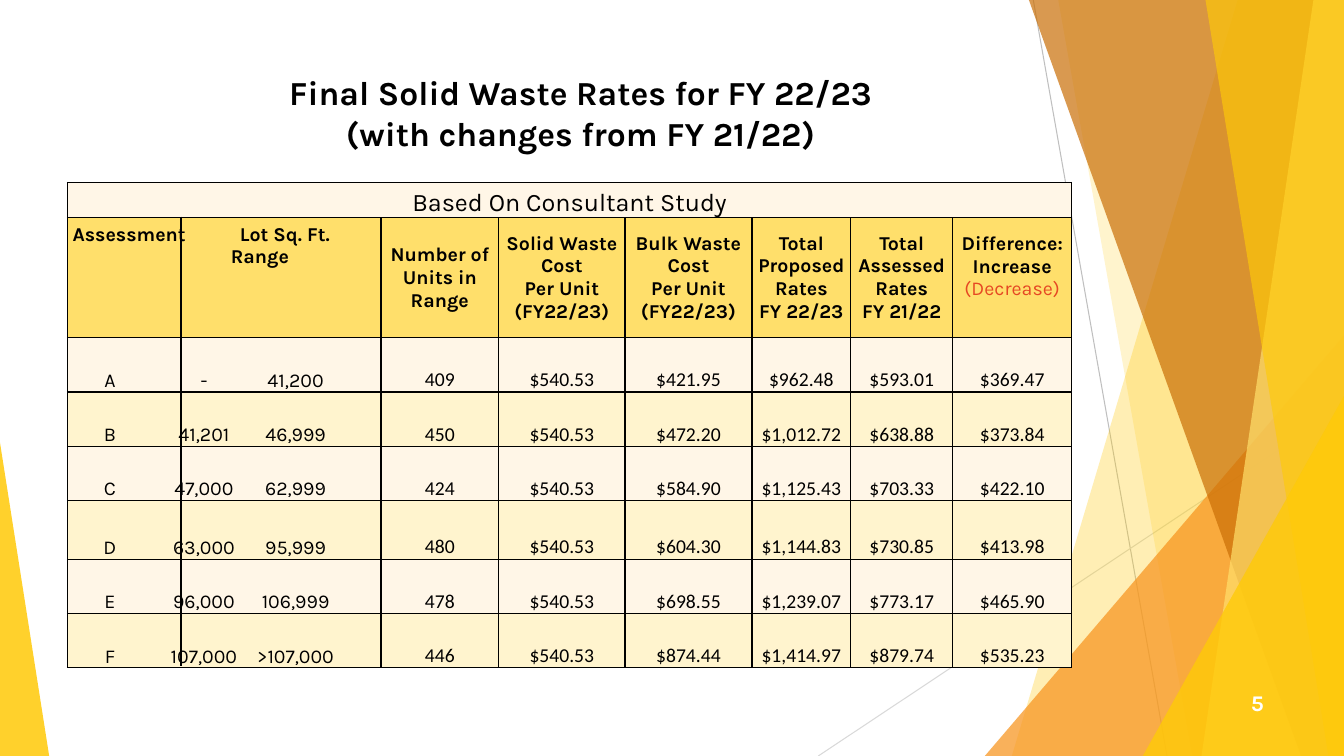
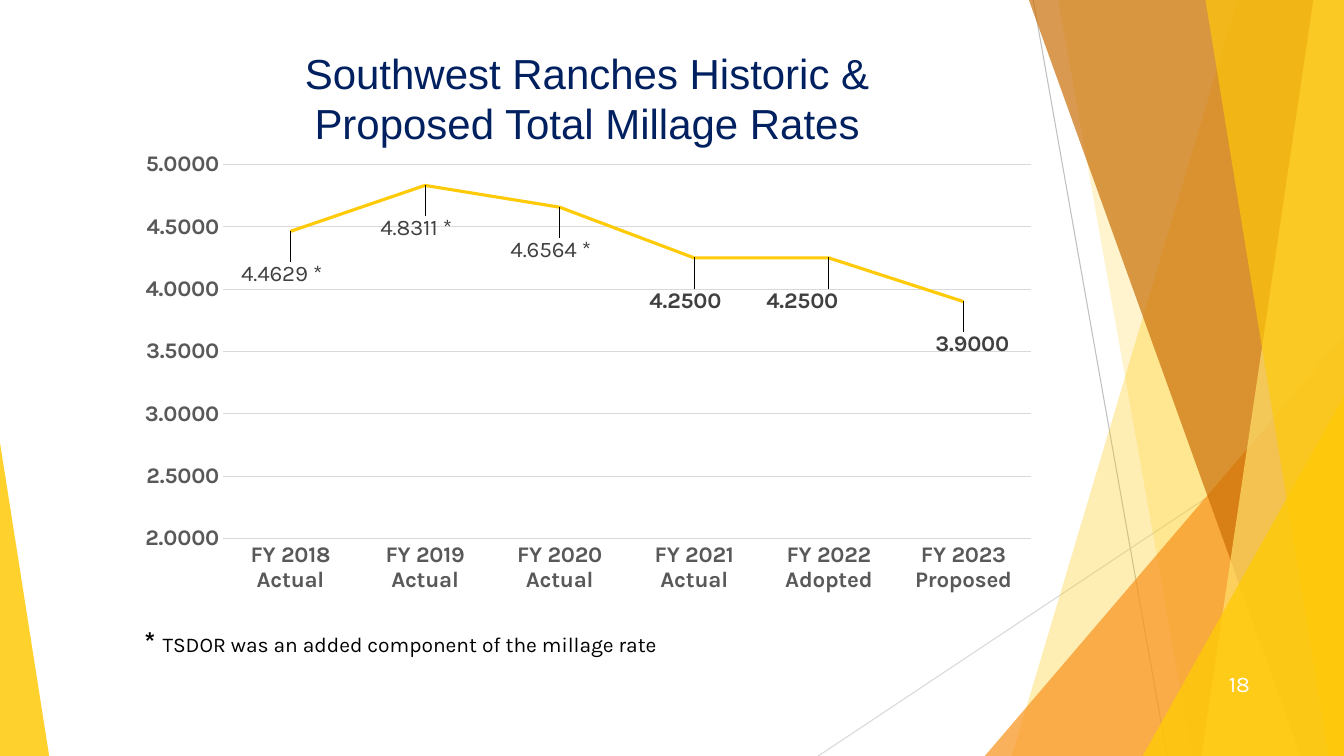
"""Build two town budget slides: solid waste rates and millage history."""
from dataclasses import dataclass

from lxml import etree
from pptx import Presentation
from pptx import util as u
from pptx.chart import data as chart_data
from pptx.dml.color import RGBColor
from pptx.enum import chart as charts, shapes, text
from pptx.oxml import ns

Cm, Pt = u.Cm, u.Pt


@dataclass(frozen=True)
class Theme:
    width: float = 33.87
    height: float = 19.05
    face: str = "Karla"
    figure_face: str = "Calibri"
    title_face: str = "Arial"
    black: str = "000000"
    white: str = "FFFFFF"
    navy: str = "002060"
    red: str = "E64823"
    gold: str = "FFCA08"
    pale_gold: str = "FFDF6B"
    orange: str = "F8931D"
    brown: str = "CA6F06"
    cream: str = "FFF6E7"
    butter: str = "FFF4CE"
    axis_text: str = "595959"
    label_text: str = "404040"
    grid: str = "D9D9D9"
    ray: str = "BFBFBF"
    big_title: int = 30
    title: int = 24
    star: int = 20
    banner: int = 18
    label: int = 16
    note: int = 15
    cell: int = 14
    chart: int = 10


THEME = Theme()
RAYS = [(26.04, 0, 29.41, 19.05, THEME.ray), (33.87, 10.24, 20.62, 19.05, THEME.grid)]
FACETS = [
    ("band", (31.19, 25.5), THEME.gold, 30),
    ("band", (26.67, 30.05), THEME.gold, 20),
    ("triangle", (24.82, 8.46, 9.05, 10.59, 1), THEME.orange, 72),
    ("band", (25.93, 32.79), THEME.brown, 70),
    ("band", (33.1, 30.28), THEME.pale_gold, 70),
    ("band", (30.38, 33.48), THEME.gold, 65),
    ("triangle", (28.8, 9.98, 5.07, 9.07, 1), THEME.gold, 80),
    ("triangle", (0, 11.15, 1.24, 7.9, 0), THEME.gold, 85),
]
COLUMN_WIDTHS = [7.9, 2.97, 3.18, 3.2, 2.49, 2.57, 3]
ROW_HEIGHTS = [0.89, 3.02, 1.37, 1.37, 1.37, 1.47, 1.37, 1.37]
HEADINGS = [
    ["Number of Units in Range"],
    ["Solid Waste", "Cost", "Per Unit", "(FY22/23)"],
    ["Bulk Waste", "Cost", "Per Unit", "(FY22/23)"],
    ["Total", "Proposed", "Rates", "FY 22/23"],
    ["Total", "Assessed", "Rates", "FY 21/22"],
    ["Difference:", "Increase", "(Decrease)"],
]
RATES = [
    ("A", "-", "41,200", "409", "$540.53", "$421.95", "$962.48", "$593.01", "$369.47"),
    ("B", "41,201", "46,999", "450", "$540.53", "$472.20", "$1,012.72", "$638.88", "$373.84"),
    ("C", "47,000", "62,999", "424", "$540.53", "$584.90", "$1,125.43", "$703.33", "$422.10"),
    ("D", "63,000", "95,999", "480", "$540.53", "$604.30", "$1,144.83", "$730.85", "$413.98"),
    ("E", "96,000", "106,999", "478", "$540.53", "$698.55", "$1,239.07", "$773.17", "$465.90"),
    ("F", "107,000", ">107,000", "446", "$540.53", "$874.44", "$1,414.97", "$879.74", "$535.23"),
]
MILLAGE = {
    "FY 2018 Actual": 4.4629, "FY 2019 Actual": 4.8311, "FY 2020 Actual": 4.6564,
    "FY 2021 Actual": 4.25, "FY 2022 Adopted": 4.25, "FY 2023 Proposed": 3.9,
}
LABEL_SHIFTS = [-0.01, -0.01, -0.01, -0.01, -0.03, 0.01]
LABEL_DROP = 0.06
STARRED_YEARS = 3


def add_xml(parent, tag, index=None, **attributes):
    child = etree.Element(ns.qn(tag), {key: str(value) for key, value in attributes.items()})
    parent.insert(len(parent) if index is None else index, child)
    return child


def add_layout(parent, index, **settings):
    manual = add_xml(add_xml(parent, "c:layout", index), "c:manualLayout")
    for key, value in settings.items():
        add_xml(manual, f"c:{key}", val=value)


class Deck:
    def __init__(self, theme):
        self.theme = theme
        self.show = Presentation()
        self.show.slide_width = Cm(theme.width)
        self.show.slide_height = Cm(theme.height)
        self.slide = None

    def start_slide(self):
        self.slide = self.show.slides.add_slide(self.show.slide_layouts[6])
        for *ends, color in RAYS:
            self.line(*ends, color, 0.75)
        for kind, geometry, color, opacity in FACETS:
            facet = self.band(*geometry) if kind == "band" else self.triangle(*geometry)
            self.paint(facet, color, opacity)

    def line(self, x1, y1, x2, y2, color, weight):
        ruled = self.slide.shapes.add_connector(
            shapes.MSO_CONNECTOR.STRAIGHT, Cm(x1), Cm(y1), Cm(x2), Cm(y2))
        ruled.line.color.rgb = RGBColor.from_string(color)
        ruled.line.width = Pt(weight)
        add_xml(ruled.element.spPr, "a:effectLst")

    def band(self, top, bottom):
        right, base = Cm(self.theme.width), Cm(self.theme.height)
        outline = self.slide.shapes.build_freeform(Cm(top), 0)
        outline.add_line_segments([(right, 0), (right, base), (Cm(bottom), base)])
        return outline.convert_to_shape()

    def triangle(self, left, top, width, height, apex):
        corner = self.slide.shapes.add_shape(
            shapes.MSO_SHAPE.ISOSCELES_TRIANGLE, Cm(left), Cm(top), Cm(width), Cm(height))
        corner.adjustments[0] = apex
        return corner

    def paint(self, facet, color, opacity):
        facet.shadow.inherit = False
        facet.line.fill.background()
        facet.fill.solid()
        facet.fill.fore_color.rgb = RGBColor.from_string(color)
        tint = facet.element.spPr.find(f"{ns.qn('a:solidFill')}/{ns.qn('a:srgbClr')}")
        add_xml(tint, "a:alpha", val=opacity * 1000)

    def style(self, font, size, color=None, face=None, bold=False):
        font.size = Pt(size)
        font.name = face or self.theme.face
        font.bold = bold
        font.color.rgb = RGBColor.from_string(color or self.theme.black)

    def set_lines(self, frame, lines, align, size, **look):
        for number, wording in enumerate(lines):
            paragraph = frame.add_paragraph() if number else frame.paragraphs[0]
            paragraph.text = wording
            paragraph.alignment = align
            self.style(paragraph.font, size, **look)

    def text_box(self, left, top, width, height):
        frame = self.slide.shapes.add_textbox(
            Cm(left), Cm(top), Cm(width), Cm(height)).text_frame
        frame.word_wrap = True
        return frame

    def title(self, box, lines, size, **look):
        self.set_lines(self.text_box(*box), lines, text.PP_ALIGN.CENTER, size, **look)

    def page_number(self, left, top, number, bold):
        frame = self.text_box(left, top, 1.9, 1.02)
        frame.vertical_anchor = text.MSO_ANCHOR.MIDDLE
        self.set_lines(frame, [number], text.PP_ALIGN.RIGHT, self.theme.label,
                       color=self.theme.white, bold=bold)

    def footnote(self, left, top, width, height, mark, wording):
        paragraph = self.text_box(left, top, width, height).paragraphs[0]
        for part, size, bold in ((mark, self.theme.star, True), (wording, self.theme.note, False)):
            run = paragraph.add_run()
            run.text = part
            self.style(run.font, size, bold=bold)

    def table(self, left, top, widths, heights):
        grid = self.slide.shapes.add_table(
            len(heights), len(widths), Cm(left), Cm(top), Cm(sum(widths)), Cm(sum(heights))).table
        grid.first_row = grid.horz_banding = False
        for column, width in zip(grid.columns, widths):
            column.width = Cm(width)
        for row, height in zip(grid.rows, heights):
            row.height = Cm(height)
        return grid

    def cell(self, cell, lines, fill, size, anchor=text.MSO_ANCHOR.BOTTOM, inset=0,
             align=text.PP_ALIGN.CENTER, **look):
        cell.fill.solid()
        cell.fill.fore_color.rgb = RGBColor.from_string(fill)
        cell.vertical_anchor = anchor
        cell.margin_left = cell.margin_right = cell.margin_top = cell.margin_bottom = Cm(inset)
        self.set_lines(cell.text_frame, lines, align, size, **look)
        properties = cell._tc.get_or_add_tcPr()
        for index, side in enumerate("LRTB"):
            edge = add_xml(properties, f"a:ln{side}", index, w=Pt(1))
            add_xml(add_xml(edge, "a:solidFill"), "a:srgbClr", val=self.theme.black)

    def tab_stops(self, paragraph, *stops):
        tabs = add_xml(paragraph._p.get_or_add_pPr(), "a:tabLst", 0)
        for stop in stops:
            add_xml(tabs, "a:tab", pos=Cm(stop), algn="ctr")

    def line_chart(self, left, top, width, height, name, points, low, high):
        theme = self.theme
        figures = chart_data.CategoryChartData(number_format="0.0000")
        figures.categories = list(points)
        figures.add_series(name, points.values())
        chart = self.slide.shapes.add_chart(
            charts.XL_CHART_TYPE.LINE, Cm(left), Cm(top), Cm(width), Cm(height), figures).chart
        chart.has_legend = chart.has_title = False
        self.style(chart.font, theme.chart)
        years, rates = chart.category_axis, chart.value_axis
        for axis in (years, rates):
            axis.major_tick_mark = axis.minor_tick_mark = charts.XL_TICK_MARK.NONE
            self.style(axis.tick_labels.font, theme.label, theme.axis_text, bold=True)
        rates.minimum_scale, rates.maximum_scale = low, high
        rates.tick_labels.number_format = "0.0000"
        rates.tick_labels.number_format_is_linked = False
        rates.format.line.fill.background()
        for rule in (years.format.line, rates.major_gridlines.format.line):
            rule.color.rgb = RGBColor.from_string(theme.grid)
            rule.width = Pt(0.75)
        chart.plots[0].vary_by_categories = False
        trend = chart.plots[0].series[0]
        trend.smooth = False
        trend.format.line.color.rgb = RGBColor.from_string(theme.gold)
        trend.format.line.width = Pt(2.25)
        self.point_labels(chart, trend)
        area = chart.element.xpath("//c:plotArea")[0]
        for layout in area.findall(ns.qn("c:layout")):
            area.remove(layout)
        add_layout(area, 0, layoutTarget="inner", xMode="edge", yMode="edge",
                   x=0.09, y=0.03, w=0.91, h=0.85)

    def point_labels(self, chart, trend):
        for number, rate in enumerate(trend.values):
            label = trend.points[number].data_label
            starred = number < STARRED_YEARS
            if starred:
                run = label.text_frame.paragraphs[0].add_run()
                run.text = f"{rate:.4f} *"
            self.style(run.font if starred else label.font, self.theme.label,
                       self.theme.label_text, bold=not starred)
            label.position = charts.XL_LABEL_POSITION.BELOW
        for mark, shift in zip(chart.element.xpath("//c:dLbl"), LABEL_SHIFTS):
            add_layout(mark, 1, x=shift, y=LABEL_DROP)


def build_rates(deck):
    theme = deck.theme
    deck.start_slide()
    deck.title((6.02, 1.7, 17.22, 2.31),
               ["Final Solid Waste Rates for FY 22/23", "(with changes from FY 21/22)"],
               theme.title, bold=True)
    grid = deck.table(1.7, 4.6, COLUMN_WIDTHS, ROW_HEIGHTS)
    grid.cell(0, 0).merge(grid.cell(0, len(COLUMN_WIDTHS) - 1))
    for column in range(len(COLUMN_WIDTHS)):
        banner = ["Based On Consultant Study"] if column == 0 else []
        deck.cell(grid.cell(0, column), banner, theme.cream, theme.banner)

    lot = grid.cell(1, 0)
    deck.cell(lot, ["Assessment\tLot Sq. Ft.", "\tRange"], theme.pale_gold, theme.cell,
              text.MSO_ANCHOR.TOP, 0.13, text.PP_ALIGN.LEFT, bold=True)
    for paragraph, stop in zip(lot.text_frame.paragraphs, (5.35, 4.72)):
        deck.tab_stops(paragraph, stop)
    for column, heading in enumerate(HEADINGS, 1):
        deck.cell(grid.cell(1, column), heading, theme.pale_gold, theme.cell,
                  text.MSO_ANCHOR.MIDDLE, 0.13, bold=True)
    difference = grid.cell(1, len(HEADINGS))
    difference.margin_bottom = Cm(0.7)
    deck.style(difference.text_frame.paragraphs[-1].font, theme.cell, theme.red)

    for row, (grade, start, end, *figures) in enumerate(RATES, 2):
        fill = theme.butter if row % 2 else theme.cream
        bracket = grid.cell(row, 0)
        deck.cell(bracket, [f"\t{grade}\t{start}\t{end}"], fill, theme.cell,
                  align=text.PP_ALIGN.LEFT)
        deck.tab_stops(bracket.text_frame.paragraphs[0], 1.07, 3.44, 5.75)
        for column, figure in enumerate(figures, 1):
            deck.cell(grid.cell(row, column), [figure], fill, theme.cell, face=theme.figure_face)
    deck.line(4.57, 5.46, 4.57, 16.79, theme.black, 1.5)
    deck.page_number(30.2, 17.2, "5", True)


def build_millage(deck):
    theme = deck.theme
    deck.start_slide()
    deck.title((3.61, 1.07, 22.38, 2.82),
               ["Southwest Ranches Historic &", "Proposed Total Millage Rates"],
               theme.big_title, color=theme.navy, face=theme.title_face)
    deck.line_chart(3.61, 3.81, 22.38, 11.13, "Series 1", MILLAGE, 2, 5)
    deck.page_number(29.85, 16.71, "18", False)
    deck.footnote(3.38, 15.6, 15.88, 1.75, "* ", "TSDOR was an added component of the millage rate")


def main():
    deck = Deck(THEME)
    build_rates(deck)
    build_millage(deck)
    deck.show.save("out.pptx")


if __name__ == "__main__":
    main()
